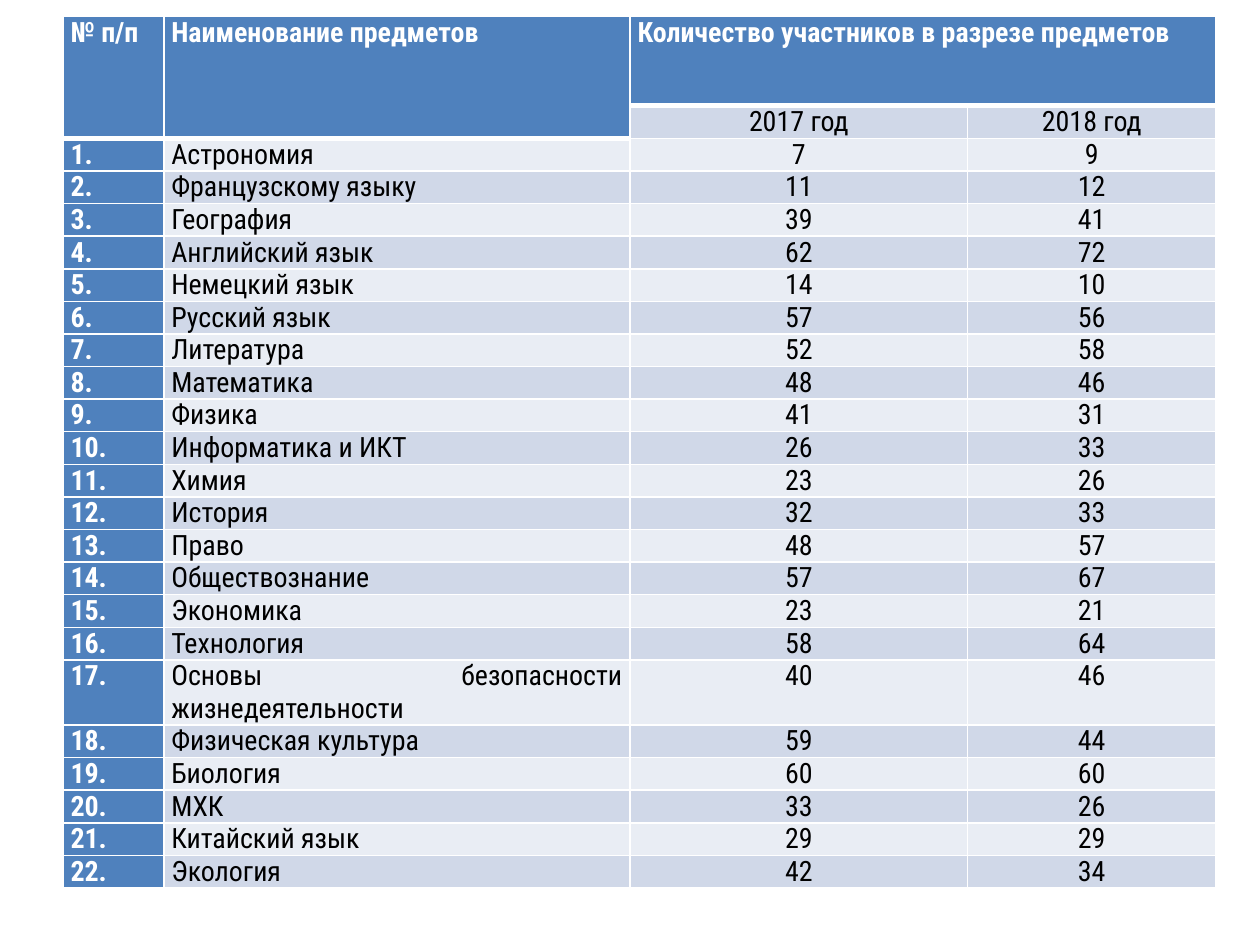
from lxml import etree
from pptx import Presentation
from pptx.dml.color import RGBColor
from pptx.enum.text import PP_ALIGN
from pptx.oxml.ns import qn
from pptx.util import Inches, Pt

JUSTIFY, CENTER = PP_ALIGN.JUSTIFY, PP_ALIGN.CENTER
FONT = "Roboto Condensed"
HEX = {"head": "4F81BD", "dark": "D0D8E8", "light": "E9EDF4",
       "white": "FFFFFF", "black": "000000"}

# Content: header rows, then subject with entrants in 2017 and 2018
HEADS = [
    ("№ п/п", "Наименование предметов",
     "Количество участников в разрезе предметов", ""),
    ("", "", "2017 год", "2018 год"),
]
SUBJECTS = [
    ("Астрономия", 7, 9),
    ("Французскому языку", 11, 12),
    ("География", 39, 41),
    ("Английский язык", 62, 72),
    ("Немецкий язык", 14, 10),
    ("Русский язык", 57, 56),
    ("Литература", 52, 58),
    ("Математика", 48, 46),
    ("Физика", 41, 31),
    ("Информатика и ИКТ", 26, 33),
    ("Химия", 23, 26),
    ("История", 32, 33),
    ("Право", 48, 57),
    ("Обществознание", 57, 67),
    ("Экономика", 23, 21),
    ("Технология", 58, 64),
    ("Основы безопасности жизнедеятельности", 40, 46),
    ("Физическая культура", 59, 44),
    ("Биология", 60, 60),
    ("МХК", 33, 26),
    ("Китайский язык", 29, 29),
    ("Экология", 42, 34),
]
WIDTHS = [0.8, 3.7, 2.68, 1.97]
HEAD_H, ROW_H, LONG = 0.71, 0.25, 30


def add_edges(cell, top, bottom):
    """Draw white cell borders, with given top and bottom widths."""
    props = cell._tc.get_or_add_tcPr()
    for side, width in zip("LRTB", (1, 1, top, bottom)):
        line = etree.SubElement(props, qn(f"a:ln{side}"), w=str(Pt(width)))
        fill = etree.SubElement(line, qn("a:solidFill"))
        etree.SubElement(fill, qn("a:srgbClr"), val=HEX["white"])


def fill_cell(cell, text, row, col):
    """Set the text and look of one cell by its place in the grid."""
    head = row == 0 or col == 0 or (row == 1 and col == 1)
    under = (row == 1 and col > 1) or (row == 2 and col < 2)
    over = row == 0 or (row == 1 and col < 2)
    add_edges(cell, 3 if under else 1, 3 if over else 1)
    shade = "head" if head else "dark" if row % 2 else "light"
    cell.fill.solid()
    cell.fill.fore_color.rgb = RGBColor.from_string(HEX[shade])
    cell.margin_left = cell.margin_right = Inches(0.06)
    cell.margin_top = cell.margin_bottom = 0
    cell.text = text
    para = cell.text_frame.paragraphs[0]
    para.alignment = CENTER if row and col > 1 else JUSTIFY
    font = para.font
    font.name, font.size, font.bold = FONT, Pt(16), head
    font.color.rgb = RGBColor.from_string(HEX["white" if head else "black"])


def main():
    deck = Presentation()
    deck.slide_width, deck.slide_height = Inches(10), Inches(7.5)
    slide = deck.slides.add_slide(deck.slide_layouts[6])

    rows = HEADS + [(f"{num}.", name, str(old), str(new))
                    for num, (name, old, new) in enumerate(SUBJECTS, 1)]
    heights = [HEAD_H] + [ROW_H * (2 if len(row[1]) > LONG else 1)
                          for row in rows[1:]]

    # Table grid
    table = slide.shapes.add_table(
        len(rows), len(WIDTHS), Inches(0.5), Inches(0.13),
        Inches(sum(WIDTHS)), Inches(sum(heights))).table
    table.horz_banding = False
    table.first_col = True
    for col, width in zip(table.columns, WIDTHS):
        col.width = Inches(width)
    for row, height in zip(table.rows, heights):
        row.height = Inches(height)

    # Cells
    for r, row in enumerate(rows):
        for c, text in enumerate(row):
            fill_cell(table.cell(r, c), text, r, c)

    # Merged headings
    for start, end in (((0, 0), (1, 0)), ((0, 1), (1, 1)), ((0, 2), (0, 3))):
        table.cell(*start).merge(table.cell(*end))

    deck.save("out.pptx")


if __name__ == "__main__":
    main()
